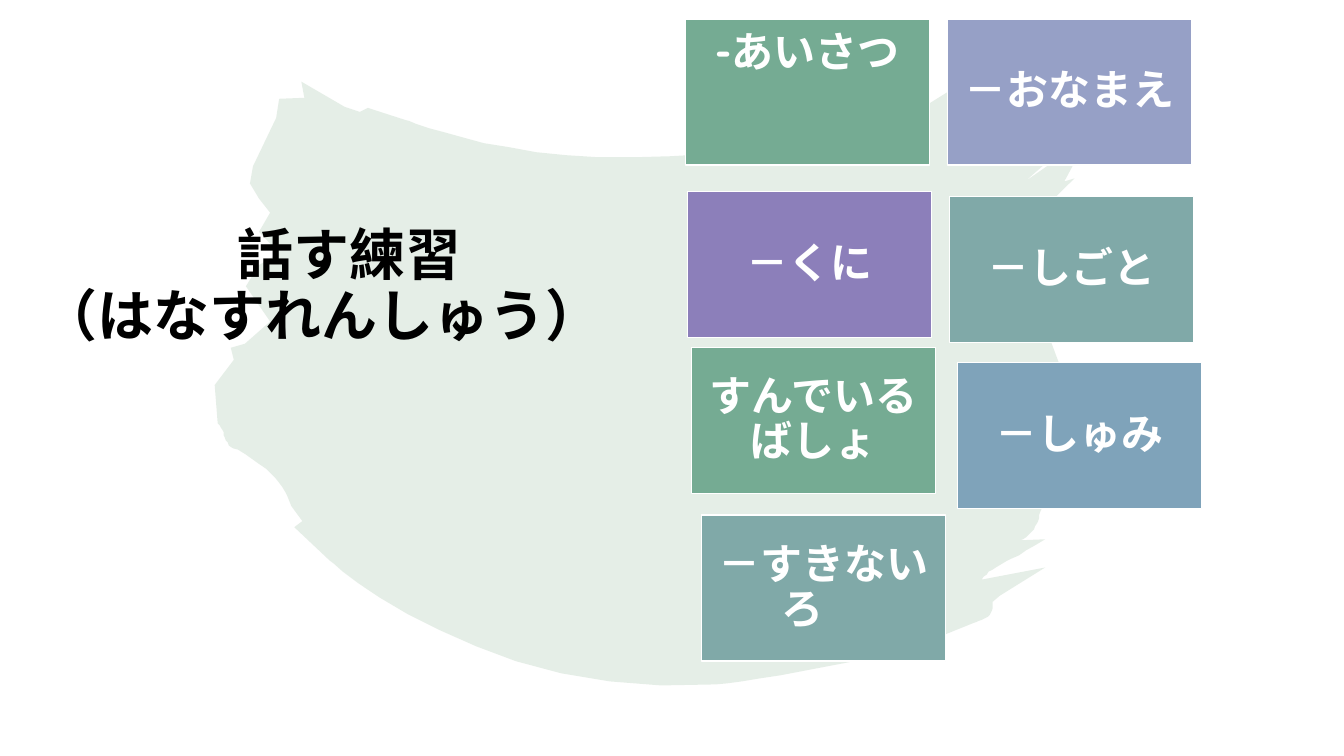
from dataclasses import dataclass

from lxml.etree import SubElement
from pptx import Presentation
from pptx.dml.color import RGBColor
from pptx.enum.shapes import MSO_SHAPE
from pptx.enum.text import MSO_ANCHOR, PP_ALIGN
from pptx.oxml.ns import qn
from pptx.slide import Slide
from pptx.text.text import TextFrame
from pptx.util import Cm, Pt


@dataclass(frozen=True)
class Theme:
    font: str = "Quicksand"
    title_size: int = 40
    card_size: int = 30
    black: str = "000000"
    white: str = "FFFFFF"
    brush: str = "81AC87"
    green: str = "75AB93"
    teal: str = "80A9A8"
    blue: str = "7FA3BA"
    lavender: str = "96A0C6"
    purple: str = "8C7FBA"


@dataclass(frozen=True)
class Card:
    text: str
    left: float
    top: float
    fill: str
    anchor: MSO_ANCHOR = MSO_ANCHOR.MIDDLE


THEME = Theme()
CARD_W, CARD_H = 6.15, 3.68
CARD_INSET = 0.3

CARDS = [
    Card("-あいさつ", 17.27, 0.48, THEME.green, MSO_ANCHOR.TOP),
    Card("－すきないろ　", 17.68, 12.98, THEME.teal),
    Card("－しゅみ", 24.13, 9.14, THEME.blue),
    Card("－おなまえ", 23.88, 0.48, THEME.lavender),
    Card("－くに", 17.32, 4.83, THEME.purple),
    Card("すんでいるばしょ", 17.42, 8.76, THEME.green),
    Card("－しごと", 23.93, 4.95, THEME.teal),
]

# Brush outline in units of 0.0254 cm: pairs are corners, sextuples are cubic curves
BRUSH_UNIT = Cm(0.0254)
BRUSH_STROKE = [
    # Top edge
    (402, 119), (408, 121, 516, 165, 665, 155), (788, 148), (899, 117),
    (1040, 29), (1074, 96),
    # Right edge
    (1049, 152), (1017, 180), (1079, 137), (1056, 180), (1066, 177),
    (1001, 241), (1088, 222), (1032, 310), (1058, 380), (1045, 479),
    (1032, 508), (1030, 520, 1024, 531, 1012, 536), (1037, 535),
    (995, 561, 982, 563, 974, 575), (1037, 563), (992, 591), (985, 597),
    (987, 611, 977, 615, 966, 618),
    # Bottom edge
    (909, 641), (890, 648, 747, 677, 710, 679),
    (488, 697, 328, 558, 327, 556), (292, 523), (300, 517), (289, 502),
    (283, 482, 270, 467, 236, 446), (220, 443, 225, 427, 216, 420),
    # Left edge
    (213, 382), (232, 357), (229, 345), (243, 341), (268, 319), (244, 284),
    (257, 263), (277, 251), (257, 230), (268, 211), (257, 197), (248, 182),
    (251, 165), (274, 117), (277, 98), (302, 97), (299, 81), (342, 106),
    (357, 111), (365, 107), (402, 119),
]


def flatten(outline: list[tuple[int, ...]], steps: int = 12) -> list[tuple[float, ...]]:
    """Turn corners and cubic curves into one run of points."""
    points = [outline[0]]
    for entry in outline[1:]:
        if len(entry) == 2:
            points.append(entry)
            continue
        x0, y0 = points[-1]
        x1, y1, x2, y2, x3, y3 = entry
        for i in range(1, steps + 1):
            t = i / steps
            u = 1 - t
            a, b, c, d = u**3, 3 * u * u * t, 3 * u * t * t, t**3
            points.append((a * x0 + b * x1 + c * x2 + d * x3,
                           a * y0 + b * y1 + c * y2 + d * y3))
    return points


def add_brush(s: Slide) -> None:
    start, *rest = flatten(BRUSH_STROKE)
    builder = s.shapes.build_freeform(*start, scale=BRUSH_UNIT)
    builder.add_line_segments(rest)
    sp = builder.convert_to_shape()
    sp.shadow.inherit = False
    sp.line.fill.background()
    sp.fill.solid()
    sp.fill.fore_color.rgb = RGBColor.from_string(THEME.brush)
    color = sp.element.spPr.find(qn("a:solidFill")).find(qn("a:srgbClr"))
    SubElement(color, qn("a:alpha")).set("val", "20000")


def set_text(tf: TextFrame, text: str, size: int, color: str, anchor: MSO_ANCHOR) -> None:
    tf.word_wrap = True
    tf.vertical_anchor = anchor
    p = tf.paragraphs[0]
    p.text = text
    p.alignment = PP_ALIGN.CENTER
    p.line_spacing = 0.9
    for r in p.runs:
        r.font.name = THEME.font
        r.font.size = Pt(size)
        r.font.bold = True
        r.font.color.rgb = RGBColor.from_string(color)


def add_card(s: Slide, card: Card) -> None:
    sp = s.shapes.add_shape(MSO_SHAPE.RECTANGLE, Cm(card.left), Cm(card.top),
                            Cm(CARD_W), Cm(CARD_H))
    sp.shadow.inherit = False
    sp.fill.solid()
    sp.fill.fore_color.rgb = RGBColor.from_string(card.fill)
    sp.line.color.rgb = RGBColor.from_string(THEME.white)
    sp.line.width = Pt(1)
    tf = sp.text_frame
    tf.margin_left = tf.margin_right = tf.margin_top = tf.margin_bottom = Cm(CARD_INSET)
    set_text(tf, card.text, THEME.card_size, THEME.white, card.anchor)


def main() -> None:
    prs = Presentation()
    prs.slide_width, prs.slide_height = Cm(33.87), Cm(19.05)
    s = prs.slides.add_slide(prs.slide_layouts[6])

    # Background brush stroke
    add_brush(s)

    # Title
    title = s.shapes.add_textbox(Cm(0), Cm(0.46), Cm(16.2), Cm(13.6))
    set_text(title.text_frame, "　話す練習\v（はなすれんしゅう）",
             THEME.title_size, THEME.black, MSO_ANCHOR.MIDDLE)

    # Topic cards
    for card in CARDS:
        add_card(s, card)

    prs.save("out.pptx")


if __name__ == "__main__":
    main()
